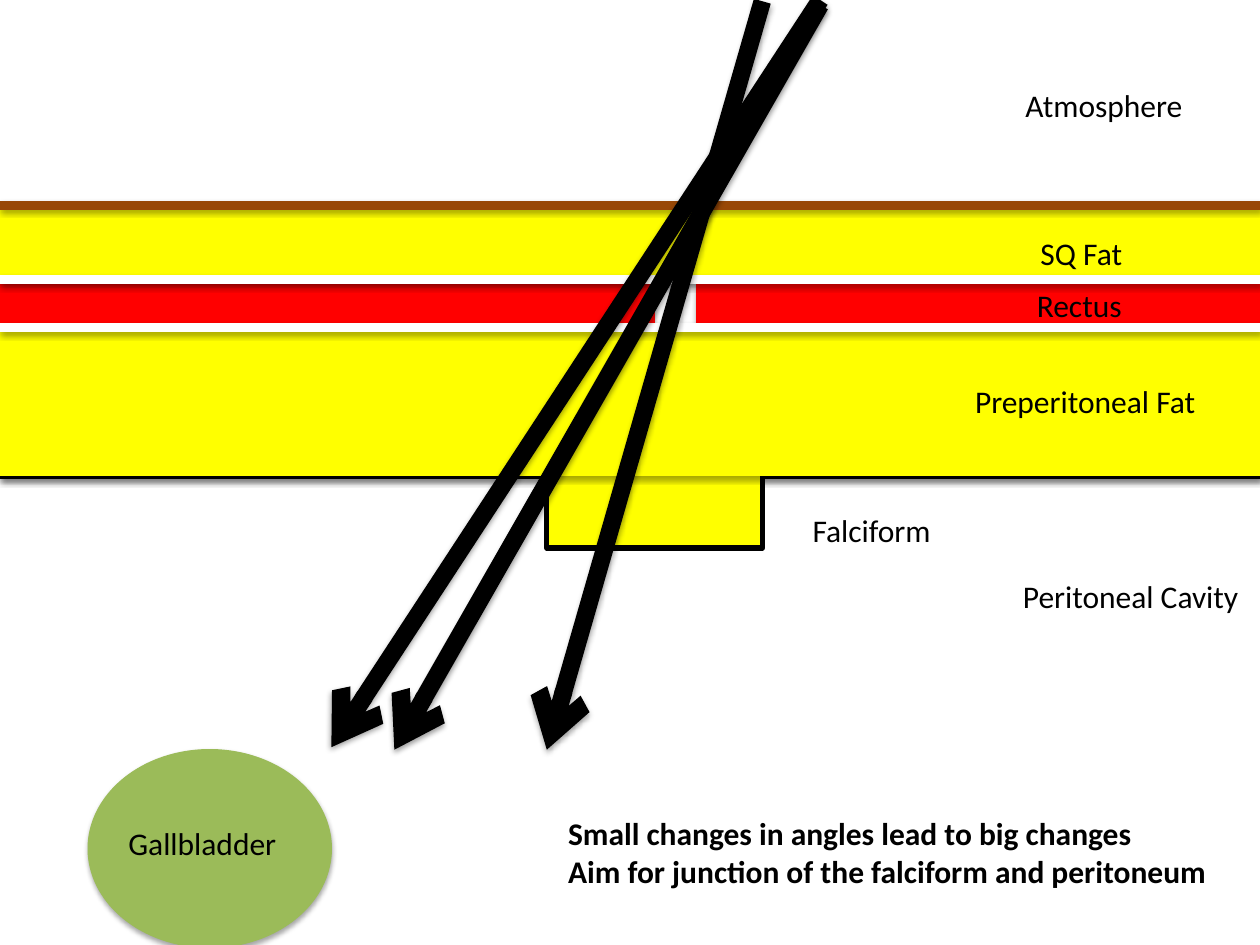
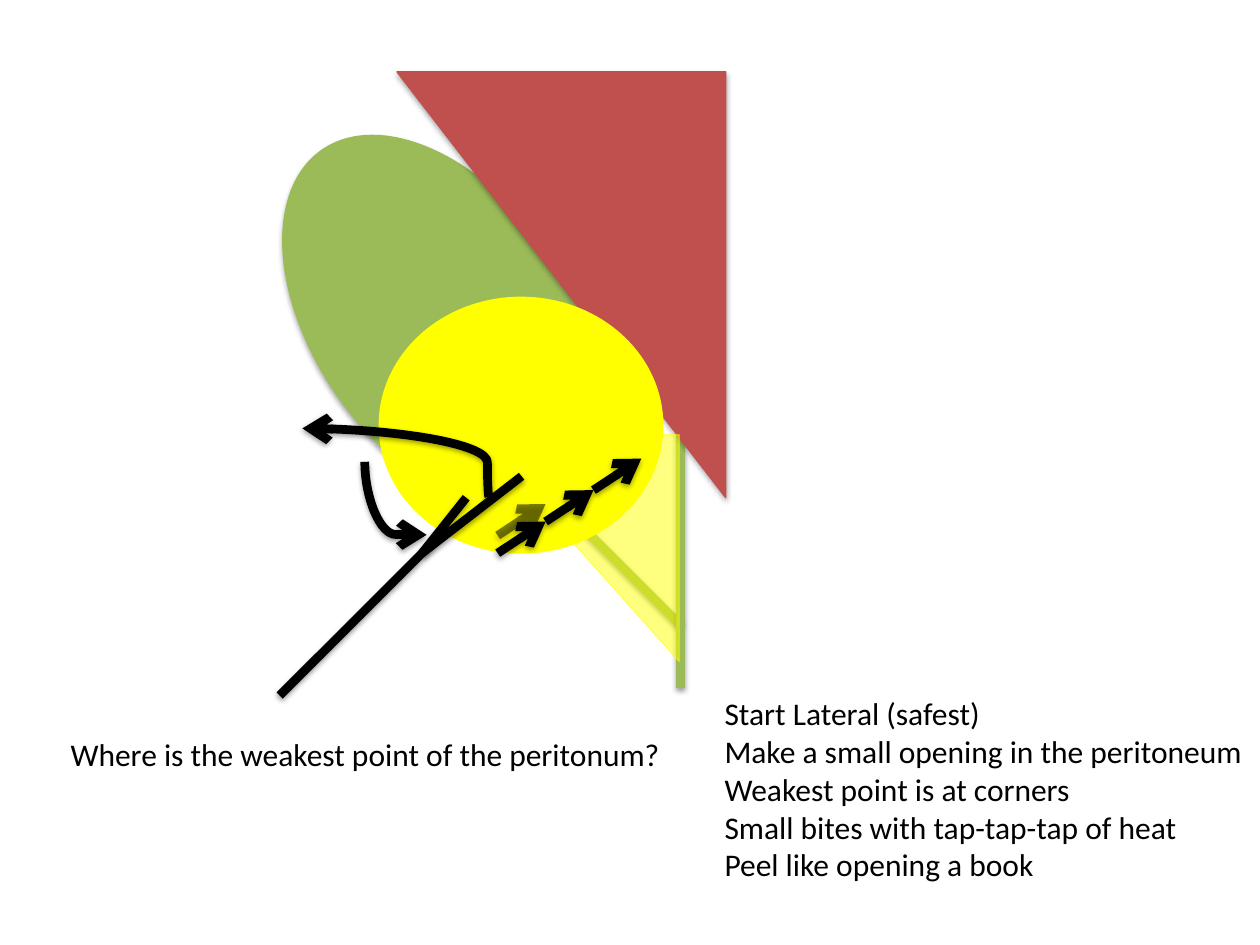
import pptx
import pptx.dml.color
import pptx.enum.shapes
import pptx.enum.text
import pptx.oxml
import pptx.oxml.ns
import pptx.util

RGBColor = pptx.dml.color.RGBColor
BLACK = RGBColor(0x00, 0x00, 0x00)
WHITE = RGBColor(0xFF, 0xFF, 0xFF)
SKIN = RGBColor(0x98, 0x48, 0x07)
FAT = RGBColor(0xFF, 0xFF, 0x00)
MUSCLE = RGBColor(0xFF, 0x00, 0x00)
BILE = RGBColor(0x9B, 0xBB, 0x59)
LIVER = RGBColor(0xC0, 0x50, 0x4D)

SHAPES = pptx.enum.shapes.MSO_SHAPE
CONNECTORS = pptx.enum.shapes.MSO_CONNECTOR
COLUMNS, ROWS = 100, 75
TITLE_AND_BODY, BLANK = 1, 6


def add_element(parent, tag, **attributes):
    child = pptx.oxml.parse_xml(f"<a:{tag} {pptx.oxml.ns.nsdecls('a')}/>")
    for name, value in attributes.items():
        child.set(name, str(value))
    parent.append(child)
    return child


class Sketch:
    """Draws on the current page; positions are columns and rows of the grid."""

    font_name = "Calibri"
    font_size = pptx.util.Pt(18)

    def __init__(self):
        self.deck = pptx.Presentation()
        self.deck.slide_width = pptx.util.Inches(10)
        self.deck.slide_height = pptx.util.Inches(7.5)
        self.page = None

    def new_page(self, layout):
        self.page = self.deck.slides.add_slide(self.deck.slide_layouts[layout])

    def place(self, column, row):
        return (round(column * self.deck.slide_width / COLUMNS),
                round(row * self.deck.slide_height / ROWS))

    def set_shadow(self, item, distance, opacity):
        properties = item._element.spPr
        for effects in properties.findall(pptx.oxml.ns.qn("a:effectLst")):
            properties.remove(effects)
        effects = add_element(properties, "effectLst")
        if distance:
            shadow = add_element(effects, "outerShdw", blurRad=pptx.util.Pt(3.1),
                                 dist=pptx.util.Pt(distance), dir=90 * 60000, rotWithShape=0)
            color = add_element(shadow, "srgbClr", val=BLACK)
            add_element(color, "alpha", val=opacity * 1000)

    def set_opacity(self, item, opacity):
        for color in item._element.spPr.findall(".//" + pptx.oxml.ns.qn("a:solidFill") + "/*"):
            add_element(color, "alpha", val=opacity * 1000)

    def shape(self, kind, area, fill, outline=None, width=0.75, turn=0, shadow=True, opacity=100):
        shape = self.page.shapes.add_shape(kind, *self.place(*area[:2]), *self.place(*area[2:]))
        shape.rotation = turn
        shape.fill.solid()
        shape.fill.fore_color.rgb = fill
        shape.line.color.rgb = outline or fill
        shape.line.width = pptx.util.Pt(width)
        if opacity < 100:
            self.set_opacity(shape, opacity)
        self.set_shadow(shape, 1.8 if shadow else 0, 35)

    def line(self, start, end, color=BLACK, width=5, arrow=False, opacity=100,
             kind=CONNECTORS.STRAIGHT):
        line = self.page.shapes.add_connector(kind, *self.place(*start), *self.place(*end))
        line.line.color.rgb = color
        line.line.width = pptx.util.Pt(width)
        if opacity < 100:
            self.set_opacity(line, opacity)
        if arrow:
            add_element(line.line._get_or_add_ln(), "tailEnd", type="arrow")
        self.set_shadow(line, 1.6, 38)
        return line

    def curved_arrow(self, start, end, turn, bend):
        """Start and end are given before the turn; bend is the share of the way to the curve."""
        properties = self.line(start, end, arrow=True, kind=CONNECTORS.CURVE)._element.spPr
        properties.find(pptx.oxml.ns.qn("a:xfrm")).set("rot", str(turn * 60000))
        geometry = properties.find(pptx.oxml.ns.qn("a:prstGeom"))
        for guides in list(geometry):
            geometry.remove(guides)
        guides = add_element(geometry, "avLst")
        add_element(guides, "gd", name="adj1", fmla=f"val {round(bend * 100000)}")

    def text(self, lines, area, bold=False, placeholder=None):
        if placeholder is None:
            box = self.page.shapes.add_textbox(*self.place(*area[:2]), *self.place(*area[2:]))
        else:
            box = self.page.placeholders[placeholder]
            box.left, box.top = self.place(*area[:2])
            box.width, box.height = self.place(*area[2:])
        frame = box.text_frame
        frame.text = "\n".join(lines)
        frame.word_wrap = False
        frame.auto_size = pptx.enum.text.MSO_AUTO_SIZE.SHAPE_TO_FIT_TEXT
        frame.vertical_anchor = pptx.enum.text.MSO_ANCHOR.TOP
        for para in frame.paragraphs:
            para.alignment = pptx.enum.text.PP_ALIGN.LEFT
            para.space_before = pptx.util.Pt(0)
            properties = para._p.get_or_add_pPr()
            properties.set("marL", "0")
            properties.set("indent", "0")
            add_element(properties, "buNone")
            para.font.name = self.font_name
            para.font.size = self.font_size
            para.font.bold = bold
            para.font.color.rgb = BLACK


def draw_abdominal_wall(sketch):
    sketch.new_page(BLANK)
    skin, fascia, sheath, peritoneum = 16.3, 22.2, 26, 37.7

    def layer(top, bottom, color, left=0, right=COLUMNS):
        sketch.shape(SHAPES.RECTANGLE, (left, top, right - left, bottom - top), color)

    def membrane(row, color):
        sketch.line((0, row), (COLUMNS, row), color)

    membrane(peritoneum, BLACK)
    sketch.shape(SHAPES.RECTANGLE, (43.4, 31.8, 17.1, 11.7), FAT, BLACK, 3, shadow=False)
    layer(fascia, sheath, MUSCLE, right=51.9)
    layer(skin, fascia - 0.1, FAT)
    membrane(skin, SKIN)
    layer(fascia, sheath, MUSCLE, left=55.3)
    layer(sheath, peritoneum, FAT)
    membrane(fascia, WHITE)
    membrane(sheath, WHITE)

    for entry, target in (((65.1, 0.4), (31.3, 59.5)),
                          ((65.1, 0), (26.3, 59.3)),
                          ((60.5, 0.1), (43.4, 59.5))):
        sketch.line(entry, target, width=10, arrow=True)

    sketch.shape(SHAPES.OVAL, (7, 59.5, 19.3, 15.7), BILE)
    for name, left, top, width in (("Atmosphere", 80.4, 6.3, 14.6),
                                   ("SQ Fat", 81.6, 18.1, 8.6),
                                   ("Rectus", 81.3, 22.2, 8.9),
                                   ("Preperitoneal Fat", 76.4, 29.8, 19.7),
                                   ("Falciform", 63.5, 40.1, 11.5),
                                   ("Peritoneal Cavity", 80.2, 45.3, 19.3),
                                   ("Gallbladder", 9.2, 64.9, 13.9)):
        sketch.text([name], (left, top, width, 4))
    sketch.text(["Small changes in angles lead to big changes",
                 "Aim for junction of the falciform and peritoneum"],
                (44.1, 64.1, 53.2, 7.1), bold=True)


def draw_peritoneum_opening(sketch):
    sketch.new_page(TITLE_AND_BODY)
    sketch.text(["Where is the weakest point of the peritonum?"], (4.6, 57.8, 49.3, 4),
                placeholder=0)
    sketch.text(["Start Lateral (safest)",
                 "Make a small opening in the peritoneum",
                 "Weakest point is at corners",
                 "Small bites with tap-tap-tap of heat",
                 "Peel like opening a book"], (56.5, 54.6, 43.5, 16.2), placeholder=1)

    sketch.shape(SHAPES.OVAL, (25, 8.9, 20.3, 33.5), BILE, turn=-35)
    sketch.line((44, 39.6), (54, 49.6), BILE)
    sketch.line((54, 54.6), (54, 34.5), BILE)
    sketch.shape(SHAPES.RIGHT_TRIANGLE, (31.5, 5.7, 26.1, 33.8), LIVER, turn=180)
    sketch.shape(SHAPES.RIGHT_TRIANGLE, (37.8, 34.5, 16.1, 18), FAT, turn=180,
                 shadow=False, opacity=50)
    sketch.shape(SHAPES.OVAL, (30.1, 23.6, 22.5, 20.3), FAT, shadow=False)

    sketch.curved_arrow((34.3, 37.1), (28.5, 42), turn=270, bend=0.995)
    hinge = (33.5, 43.9)
    for tool_end in ((41.4, 37.8), (37, 39.5), (22.2, 55.2)):
        sketch.line(hinge, tool_end)
    sketch.curved_arrow((24, 34), (38.8, 39.4), turn=180, bend=0.008)

    left, top, across, up = 39.5, 43.9, 3.8, 2.5
    sketch.line((left, top - 1.4), (left + across, top - 1.4 - up), arrow=True, opacity=50)
    for tap in range(3):
        sketch.line((left + tap * across, top - tap * up),
                    (left + (tap + 1) * across, top - (tap + 1) * up), arrow=True)


def main():
    sketch = Sketch()
    draw_abdominal_wall(sketch)
    draw_peritoneum_opening(sketch)
    sketch.deck.save("out.pptx")


if __name__ == "__main__":
    main()
